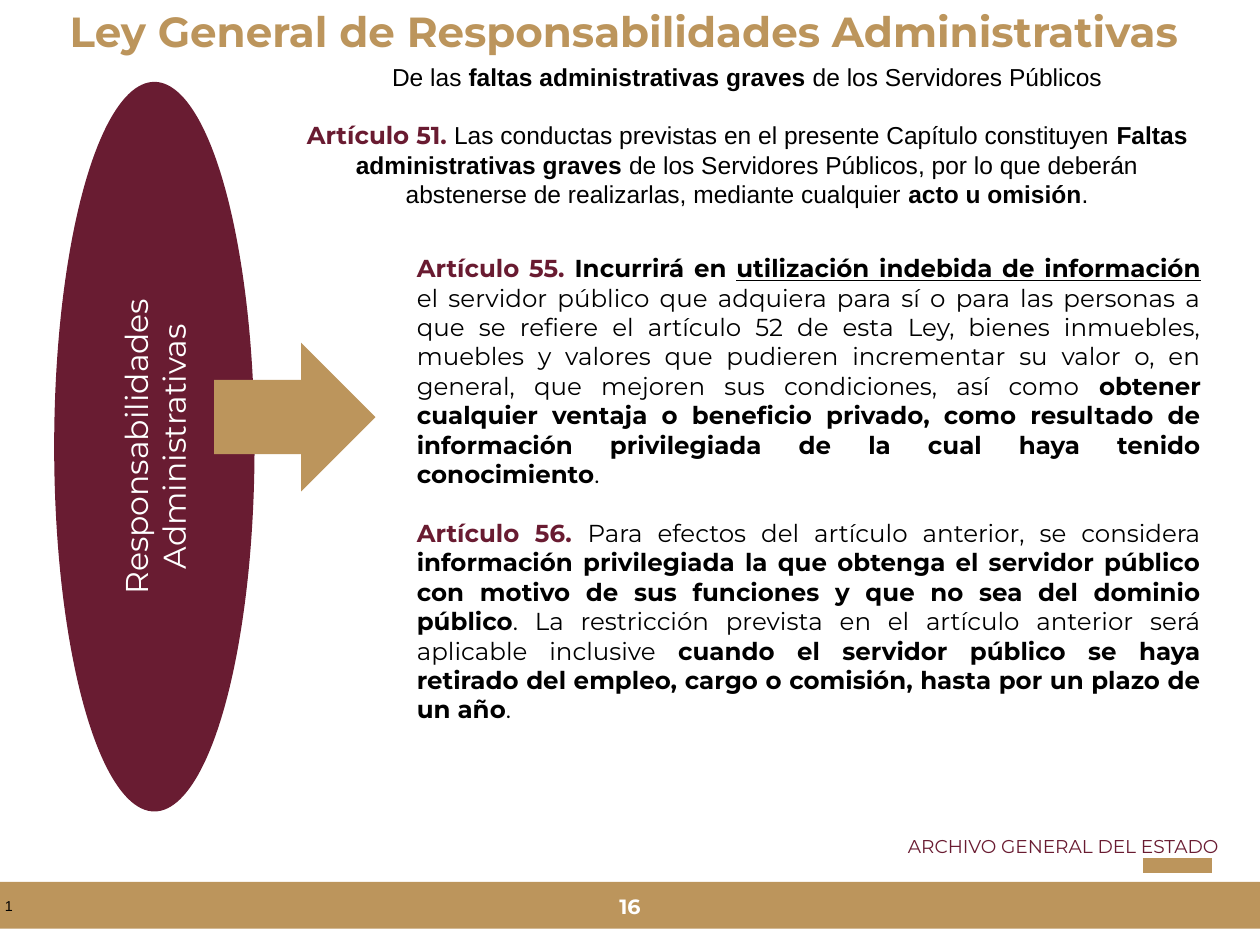
from dataclasses import dataclass

from pptx import Presentation
from pptx.dml.color import RGBColor
from pptx.enum.shapes import MSO_CONNECTOR as Connector, MSO_SHAPE as Shape
from pptx.enum.text import MSO_ANCHOR as Anchor, PP_ALIGN as Align
from pptx.oxml.ns import qn
from pptx.util import Inches, Pt


@dataclass(frozen=True)
class Theme:
    gold: str = "BC955C"
    wine: str = "691C32"
    wine_text: str = "691B31"
    white: str = "FFFFFF"
    black: str = "000000"
    brand: str = "Montserrat"
    plain: str = "Arial"
    title: float = 24
    label: float = 18
    body: float = 14
    page: float = 11.8
    caption: float = 10.6
    small: float = 8.2
    blank_line: float = 16.8


@dataclass(frozen=True)
class Run:
    text: str
    bold: bool = False
    underline: bool = False
    color: str = ""
    font: str = ""


class SlideBuilder:
    """Places elements on a grid of 100 columns by 75 rows."""

    def __init__(self, deck, theme):
        self.theme = theme
        self.slide = deck.slides.add_slide(deck.slide_layouts[6])
        self.column = deck.slide_width / 100
        self.row = deck.slide_height / 75

    def place(self, left, top, width, height):
        return (round(left * self.column), round(top * self.row),
                round(width * self.column), round(height * self.row))

    def shape(self, kind, area, fill):
        shape = self.slide.shapes.add_shape(kind, *self.place(*area))
        shape.shadow.inherit = False
        shape.fill.solid()
        shape.fill.fore_color.rgb = RGBColor.from_string(fill)
        shape.line.fill.background()
        return shape

    def bar(self, left, right, row, color, weight):
        start, y, end, _ = self.place(left, row, right, 0)
        bar = self.slide.shapes.add_connector(Connector.STRAIGHT, start, y, end, y)
        bar.line.color.rgb = RGBColor.from_string(color)
        bar.line.width = Pt(weight)
        properties = bar._element.spPr
        properties.append(properties.makeelement(qn("a:effectLst"), {}))

    def text(self, area, paragraphs, **style):
        box = self.slide.shapes.add_textbox(*self.place(*area))
        self.fill_text(box, paragraphs, **style)

    def fill_text(self, shape, paragraphs, size, color, font, align=Align.CENTER,
                  anchor=Anchor.TOP, inset=(0.1, 0.05), spacing=1.0, gap=0, turn=None):
        frame = shape.text_frame
        frame.word_wrap = True
        frame.vertical_anchor = anchor
        frame.margin_left = frame.margin_right = Inches(inset[0])
        frame.margin_top = frame.margin_bottom = Inches(inset[1])
        if turn:
            frame._txBody.bodyPr.set("vert", turn)
        for index, runs in enumerate(paragraphs):
            paragraph = frame.add_paragraph() if index else frame.paragraphs[0]
            paragraph.alignment = align
            paragraph.line_spacing = spacing
            paragraph.space_before = Pt(gap if index else 0)
            for part in runs:
                run = paragraph.add_run()
                run.text = part.text
                run.font.size = Pt(size)
                run.font.name = part.font or font
                run.font.bold = part.bold
                run.font.underline = part.underline
                run.font.color.rgb = RGBColor.from_string(part.color or color)


def main():
    theme = Theme()
    deck = Presentation()
    deck.slide_width, deck.slide_height = Inches(10), Inches(7.5)
    page = SlideBuilder(deck, theme)

    def article(number):
        return Run(f"Artículo {number}. ", True, color=theme.wine_text, font=theme.brand)

    # Footer
    footer = page.shape(Shape.RECTANGLE, (-0.2, 70, 100.6, 3.7), theme.gold)
    page.fill_text(footer, [[Run("1")]], size=theme.small, color=theme.black,
                   font=theme.plain, align=Align.LEFT, anchor=Anchor.MIDDLE,
                   inset=(0.06, 0.06))
    page.text((47.6, 70.2, 4.8, 3.7), [[Run("16", True)]], size=theme.page,
              color=theme.white, font=theme.brand, anchor=Anchor.MIDDLE,
              inset=(0.1, 0.1), spacing=0.9)
    page.text((46.8, 65.9, 50.5, 2.8), [[Run("ARCHIVO GENERAL DEL ESTADO")]],
              size=theme.caption, color=theme.wine_text, font=theme.brand,
              align=Align.RIGHT, inset=(0.06, 0.06), spacing=0.9)
    page.bar(90.7, 96.2, 68.7, theme.gold, 9)

    # Title
    page.text((0, 0, 99, 4.9),
              [[Run("Ley General de Responsabilidades Administrativas", True)]],
              size=theme.title, color=theme.gold, font=theme.brand, inset=(0.09, 0.04))

    # Topic and arrow
    topic = page.shape(Shape.OVAL, (4.3, 6.5, 15.9, 57.9), theme.wine)
    page.fill_text(topic, [[Run("Responsabilidades Administrativas")]], size=theme.label,
                   color=theme.white, font=theme.brand, anchor=Anchor.MIDDLE,
                   inset=(0.08, 0.04), turn="vert270")
    page.shape(Shape.RIGHT_ARROW, (17, 27.2, 12.8, 11.8), theme.gold)

    # Serious offences
    body = dict(size=theme.body, color=theme.black, gap=theme.blank_line)
    page.text((23.3, 4.4, 72, 12.8), [
        [Run("De las "), Run("faltas administrativas graves ", True),
         Run("de los Servidores Públicos")],
        [article(51),
         Run("Las conductas previstas en el presente Capítulo constituyen "),
         Run("Faltas administrativas graves ", True),
         Run("de los Servidores Públicos, por lo que deberán abstenerse de realizarlas, "
             "mediante cualquier "),
         Run("acto u omisión", True), Run(".")],
    ], font=theme.plain, **body)

    # Misuse of information
    page.text((32.1, 19.6, 64.2, 38.7), [
        [article(55), Run("Incurrirá en ", True),
         Run("utilización indebida de información ", True, True),
         Run("el servidor público que adquiera para sí o para las personas a que se refiere "
             "el artículo 52 de esta Ley, bienes inmuebles, muebles y valores que pudieren "
             "incrementar su valor o, en general, que mejoren sus condiciones, así como "),
         Run("obtener cualquier ventaja o beneficio privado, como resultado de información "
             "privilegiada de la cual haya tenido conocimiento", True), Run(".")],
        [article(56), Run("Para efectos del artículo anterior, se considera "),
         Run("información privilegiada la que obtenga el servidor público con motivo de sus "
             "funciones y que no sea del dominio público", True),
         Run(". La restricción prevista en el artículo anterior será aplicable inclusive "),
         Run("cuando el servidor público se haya retirado del empleo, cargo o comisión, "
             "hasta por un plazo de un año", True), Run(".")],
    ], font=theme.brand, align=Align.JUSTIFY, **body)

    deck.save("out.pptx")


if __name__ == "__main__":
    main()
